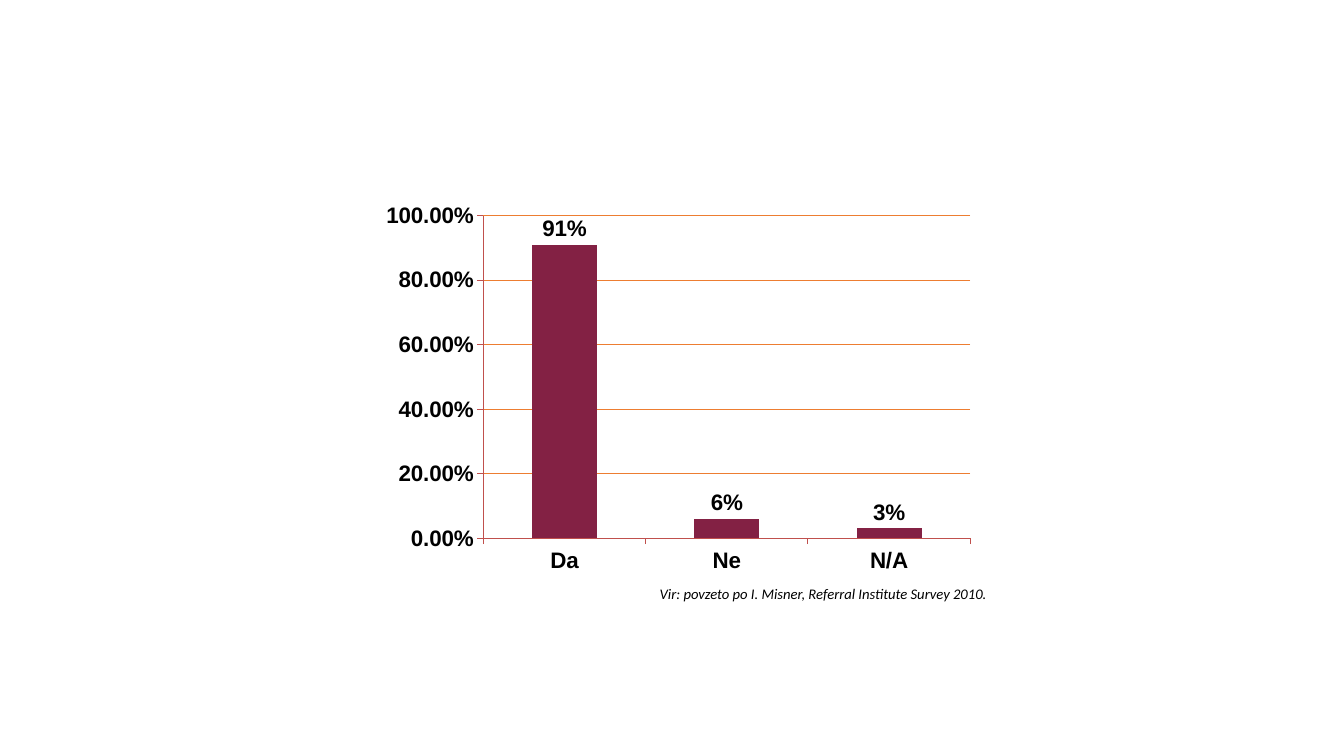
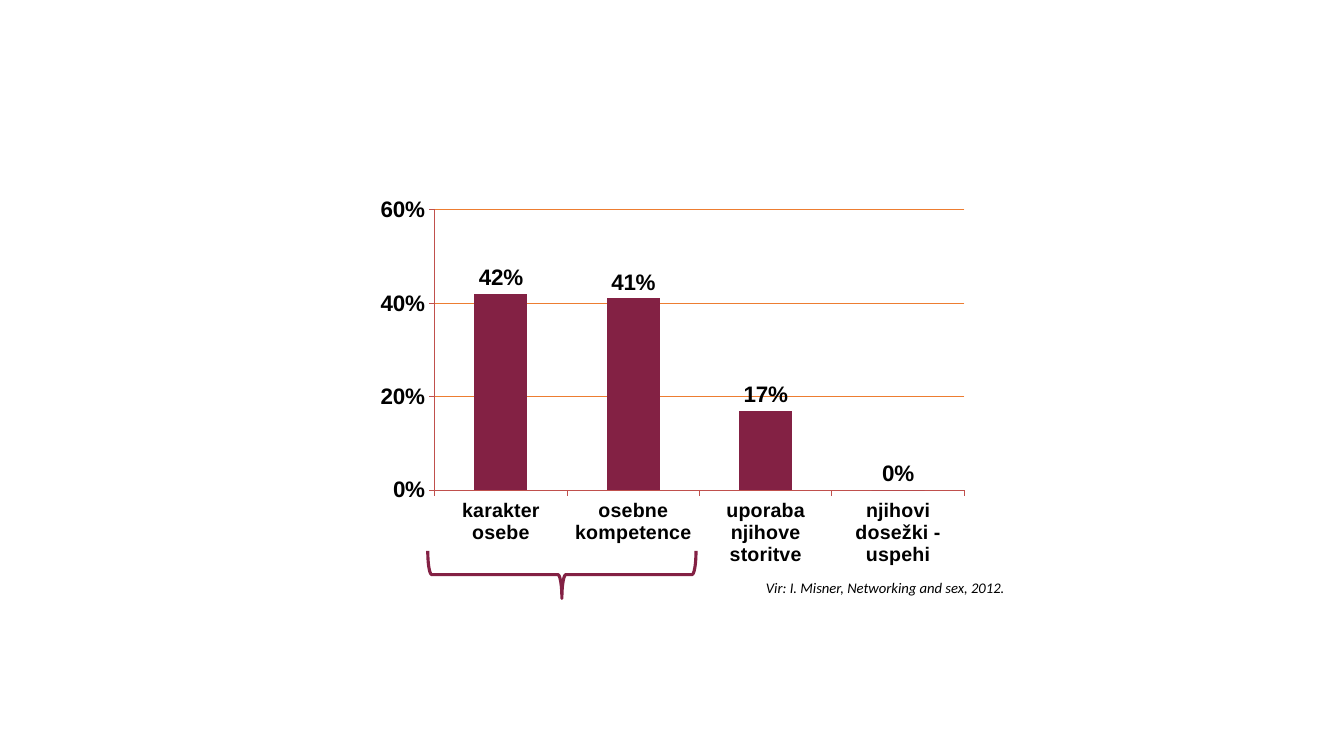
from collections import namedtuple

from lxml.etree import SubElement
from pptx import Presentation
from pptx.chart.data import CategoryChartData
from pptx.dml.color import RGBColor
from pptx.enum.chart import XL_CHART_TYPE, XL_LABEL_POSITION, XL_TICK_MARK
from pptx.enum.shapes import MSO_SHAPE
from pptx.enum.text import PP_ALIGN
from pptx.oxml.ns import qn
from pptx.util import Cm, Pt

# Shared colours, formats and sizes
BURGUNDY = RGBColor(0x83, 0x21, 0x44)
AXIS_RED = RGBColor(0xC0, 0x50, 0x4D)
GRID_ORANGE = RGBColor(0xED, 0x7D, 0x31)
BLACK = RGBColor(0, 0, 0)

CHART_FONT = {"name": "Arial", "size": Pt(16), "bold": True}
SOURCE_FONT = {"name": "Calibri", "size": Pt(10.5), "italic": True}
SOURCE_MARGINS = {"margin_left": Cm(0.18), "margin_right": Cm(0.33),
                  "margin_top": Cm(0.1), "margin_bottom": Cm(0.1)}
CHART_WIDTH, CHART_HEIGHT = 15.34, 9.68

# A box is in centimetres; a plot area is in fractions of its chart
Box = namedtuple("Box", "left top width height")


def set_attributes(target, values):
    for name, value in values.items():
        setattr(target, name, value)


def set_font(font, values):
    set_attributes(font, values)
    font.color.rgb = BLACK


def set_line(line, color, width=0.75):
    line.color.rgb = color
    line.width = Pt(width)


def place(box):
    return [Cm(length) for length in box]


def set_plot_area(chart, plot_box):
    """Fix the inner plot area within the chart."""
    plot_area = chart._chartSpace.chart.plotArea
    layout = plot_area.find(qn("c:layout"))
    if layout is None:
        layout = SubElement(plot_area, qn("c:layout"))
        plot_area.insert(0, layout)
    manual = SubElement(layout, qn("c:manualLayout"))
    settings = [("layoutTarget", "inner"), ("xMode", "edge"), ("yMode", "edge"),
                *zip("xywh", plot_box)]
    for tag, value in settings:
        SubElement(manual, qn(f"c:{tag}")).set("val", str(value))


def add_survey_chart(slide, box, answers, plot_box, maximum, axis_format, category_size):
    data = CategoryChartData(number_format="0%")
    data.categories = list(answers)
    data.add_series("Series 1", list(answers.values()))
    frame = slide.shapes.add_chart(XL_CHART_TYPE.COLUMN_CLUSTERED, *place(box), data)
    chart = frame.chart
    set_attributes(chart, {"has_legend": False, "has_title": False})
    set_font(chart.font, CHART_FONT)
    set_plot_area(chart, plot_box)

    # Axes and gridlines
    for axis, size in ((chart.category_axis, category_size), (chart.value_axis, 16)):
        axis.major_tick_mark = XL_TICK_MARK.OUTSIDE
        set_line(axis.format.line, AXIS_RED)
        set_font(axis.tick_labels.font, {**CHART_FONT, "size": Pt(size)})
    chart.category_axis.has_major_gridlines = False
    value_axis = chart.value_axis
    set_attributes(value_axis, {"minimum_scale": 0, "maximum_scale": maximum,
                                "major_unit": 0.2, "has_major_gridlines": True})
    set_line(value_axis.major_gridlines.format.line, GRID_ORANGE)
    set_attributes(value_axis.tick_labels, {"number_format": axis_format,
                                            "number_format_is_linked": False})

    # Columns and their labels
    plot = chart.plots[0]
    set_attributes(plot, {"gap_width": 150, "vary_by_categories": False,
                          "has_data_labels": True})
    fill = plot.series[0].format.fill
    fill.solid()
    fill.fore_color.rgb = BURGUNDY
    set_attributes(plot.data_labels, {
        "show_value": True, "number_format": "0%", "number_format_is_linked": False,
        "position": XL_LABEL_POSITION.OUTSIDE_END})
    set_font(plot.data_labels.font, CHART_FONT)


def add_source(slide, box, text):
    text_frame = slide.shapes.add_textbox(*place(box)).text_frame
    set_attributes(text_frame, {"word_wrap": True, **SOURCE_MARGINS})
    paragraph = text_frame.paragraphs[0]
    paragraph.alignment = PP_ALIGN.RIGHT
    run = paragraph.add_run()
    run.text = text
    set_font(run.font, SOURCE_FONT)


def add_brace(slide, center_x, center_y, span, depth):
    """Add a brace that opens upwards and is centred on the given point."""
    box = Box(center_x - depth / 2, center_y - span / 2, depth, span)
    brace = slide.shapes.add_shape(MSO_SHAPE.RIGHT_BRACE, *place(box))
    brace.rotation = 90
    brace.shadow.inherit = False
    brace.fill.background()
    set_line(brace.line, BURGUNDY, 2.25)


def add_survey_slide(presentation, left, top, source, source_right, **chart_options):
    """Add a slide with a chart and its source right below it."""
    slide = presentation.slides.add_slide(presentation.slide_layouts[6])
    box = Box(left, top, CHART_WIDTH, CHART_HEIGHT)
    add_survey_chart(slide, box, **chart_options)
    source_left = 11.15
    add_source(slide, Box(source_left, top + CHART_HEIGHT,
                          source_right - source_left, 1.4), source)
    return slide, box


def main():
    presentation = Presentation()
    set_attributes(presentation, {"slide_width": Cm(33.87), "slide_height": Cm(19.05)})

    # Yes or no survey
    add_survey_slide(
        presentation, 9.42, 4.95,
        "Vir: povzeto po I. Misner, Referral Institute Survey 2010.", 25.2,
        answers={"Da": 0.91, "Ne": 0.06, "N/A": 0.03},
        plot_box=Box(0.18, 0.05, 0.8, 0.84),
        maximum=1, axis_format="0.00%", category_size=16)

    # Reasons survey, with a brace under the two leading reasons
    slide, box = add_survey_slide(
        presentation, 9.27, 4.8,
        "Vir: I. Misner, Networking and sex, 2012.", 25.65,
        answers={"karakter osebe": 0.42, "osebne kompetence": 0.41,
                 "uporaba njihove storitve": 0.17, "njihovi dosežki - uspehi": 0},
        plot_box=Box(0.11, 0.05, 0.87, 0.73),
        maximum=0.6, axis_format="0%", category_size=14)
    add_brace(slide, box.left + 4.89, box.top + box.height, span=6.76, depth=1.2)

    presentation.save("out.pptx")


if __name__ == "__main__":
    main()
